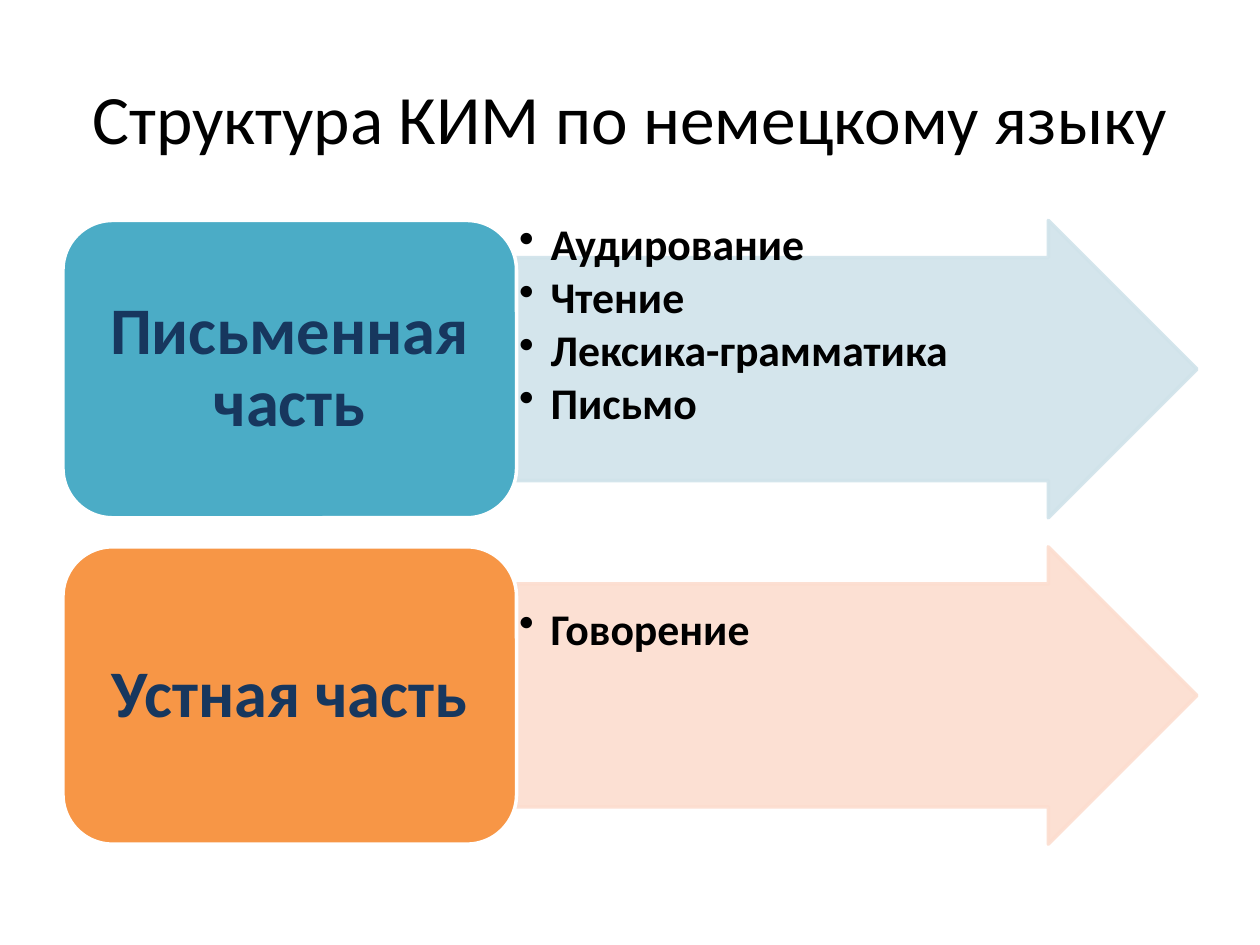
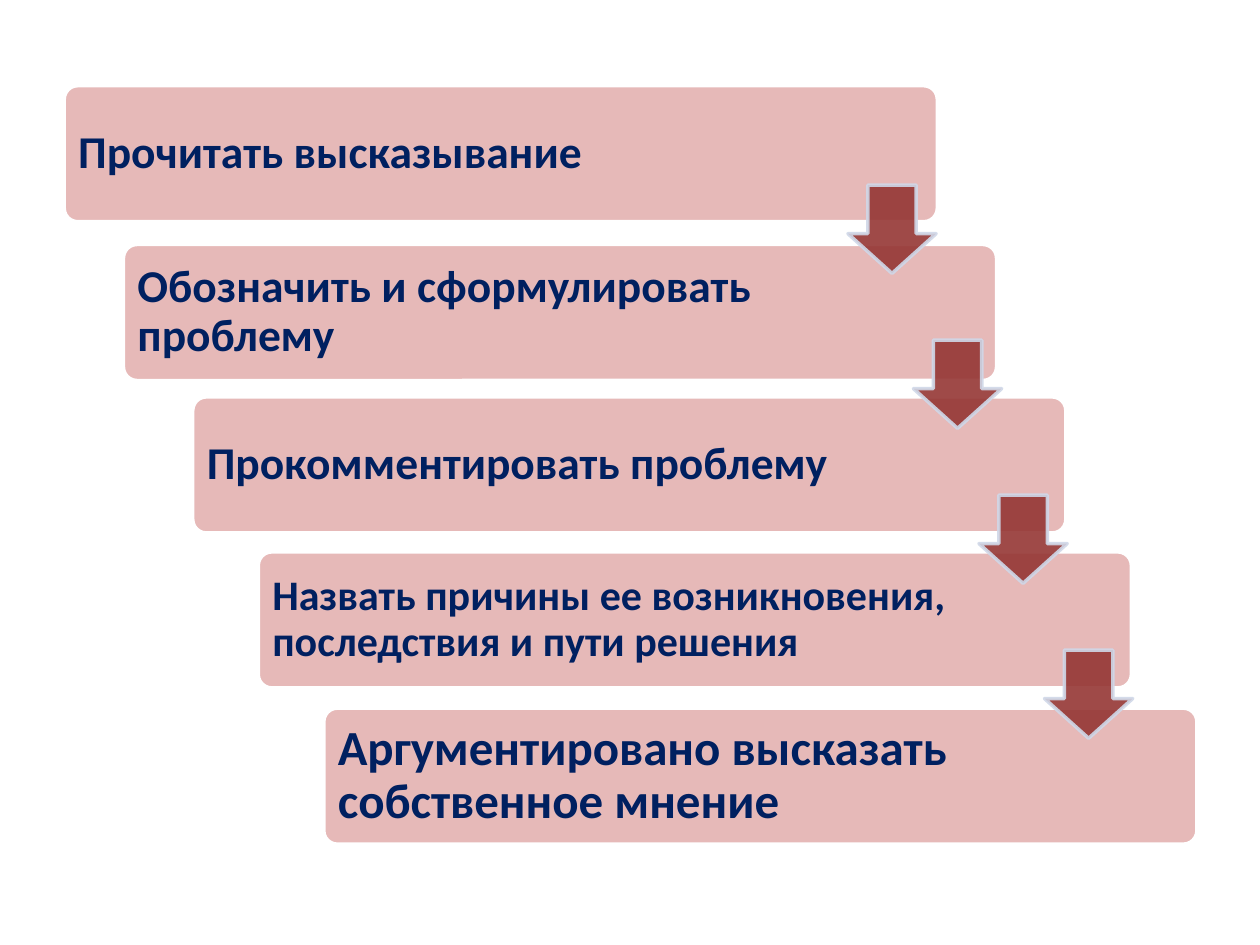
from lxml.etree import SubElement
from pptx import Presentation
from pptx.dml.color import RGBColor
from pptx.enum.shapes import MSO_SHAPE
from pptx.enum.text import MSO_ANCHOR, MSO_AUTO_SIZE, PP_ALIGN
from pptx.oxml.ns import qn
from pptx.util import Inches, Pt

HUES = {
    "black": "000000", "white": "FFFFFF", "navy": "17375E", "ink": "002060",
    "teal": "4BACC6", "ice": "D0E3EA", "orange": "F79646", "peach": "FCDDCF",
    "rose": "E6B9B8", "wine": "953735", "mist": "D0D8E8",
}


def draw(slide, kind, box, fill, edge, adjust=(), alpha=None):
    """Add a filled shape with a 2 pt edge; alpha is the opacity in percent."""
    shape = slide.shapes.add_shape(kind, *map(Inches, box))
    shape.shadow.inherit = False
    shape.line.width = Pt(2)
    for i, value in enumerate(adjust):
        shape.adjustments[i] = value
    for paint, hue in ((shape.fill, fill), (shape.line.fill, edge)):
        paint.solid()
        paint.fore_color.rgb = RGBColor.from_string(HUES[hue])
    if alpha:
        for color in shape.element.spPr.iter(qn("a:srgbClr")):
            SubElement(color, qn("a:alpha"), val=str(alpha * 1000))
    return shape


def write(shape, lines, size, hue, align, anchor, insets, bold=True, spacing=0.9, after=0):
    """Fill the text frame; insets run left, top, right, bottom in inches."""
    frame = shape.text_frame
    frame.text = "\n".join(lines)
    look = {"word_wrap": True, "auto_size": MSO_AUTO_SIZE.NONE, "vertical_anchor": anchor}
    sides = ("margin_left", "margin_top", "margin_right", "margin_bottom")
    look.update(zip(sides, map(Inches, insets)))
    for name, value in look.items():
        setattr(frame, name, value)
    for para in frame.paragraphs:
        para.alignment = align
        para.line_spacing = spacing
        para.space_after = Pt(after)
        for name, value in {"name": "Calibri", "size": Pt(size), "bold": bold}.items():
            setattr(para.font, name, value)
        para.font.color.rgb = RGBColor.from_string(HUES[hue])
    return frame.paragraphs


deck = Presentation()
deck.slide_width, deck.slide_height = Inches(10), Inches(7.5)

# Slide 1: exam parts
slide = deck.slides.add_slide(deck.slide_layouts[5])
title = slide.shapes.title
title.left, title.top, title.width, title.height = map(Inches, (0.5, 0.3, 9, 1.25))
write(title, ["Структура КИМ по немецкому языку"], 39.6, "black", PP_ALIGN.CENTER,
      MSO_ANCHOR.MIDDLE, (0.1, 0.05, 0.1, 0.05), bold=False, spacing=1.0)

# name, fill, arrow fill, top, drop of the list below the top, list
parts = [
    ("Письменная часть", "teal", "ice", 1.75, 0,
     ["Аудирование", "Чтение", "Лексика-грамматика", "Письмо"]),
    ("Устная часть", "orange", "peach", 4.34, 0.46, ["Говорение"]),
]
for name, fill, pale, top, drop, items in parts:
    draw(slide, MSO_SHAPE.RIGHT_ARROW, (4.1, top, 5.4, 2.36), pale, pale, (0.75, 0.5), 90)
    area = slide.shapes.add_textbox(*map(Inches, (4.1, top + drop, 5.4, 2.36 - drop)))
    paras = write(area, items, 25, "black", PP_ALIGN.LEFT, MSO_ANCHOR.TOP,
                  [0.02] * 4, after=3.3)
    for para in paras:
        props = para._p.get_or_add_pPr()
        props.set("marL", str(Inches(0.25)))
        props.set("indent", str(Inches(-0.25)))
        bullet = props.makeelement(qn("a:buChar"), {"char": "•"})
        props.insert_element_before(bullet, "a:tabLst", "a:defRPr", "a:extLst")
    card = draw(slide, MSO_SHAPE.ROUNDED_RECTANGLE, (0.5, top, 3.6, 2.36), fill, "white")
    write(card, [name], 38, "navy", PP_ALIGN.CENTER, MSO_ANCHOR.MIDDLE, (0.05, 0, 0.05, 0))

# Slide 2: staircase of steps
slide = deck.slides.add_slide(deck.slide_layouts[6])
steps = [
    (0.51, 0.68, 26, "Прочитать высказывание"),
    (0.98, 1.94, 26, "Обозначить и сформулировать проблему"),
    (1.53, 3.15, 26, "Прокомментировать проблему"),
    (2.05, 4.38, 24, "Назвать причины ее возникновения, последствия и пути решения"),
    (2.57, 5.62, 28, "Аргументировано высказать собственное мнение"),
]
for left, top, size, text in steps:
    step = draw(slide, MSO_SHAPE.ROUNDED_RECTANGLE, (left, top, 6.93, 1.08),
                "rose", "white", [0.1])
    write(step, [text], size, "ink", PP_ALIGN.LEFT, MSO_ANCHOR.MIDDLE,
          (0.08, 0.08, 1.3, 0.08))
for i in range(len(steps) - 1):
    draw(slide, MSO_SHAPE.DOWN_ARROW, (6.73 + 0.52 * i, 1.47 + 1.23 * i, 0.7, 0.7),
         "wine", "mist", (0.55, 0.45), 90)

deck.save("out.pptx")
